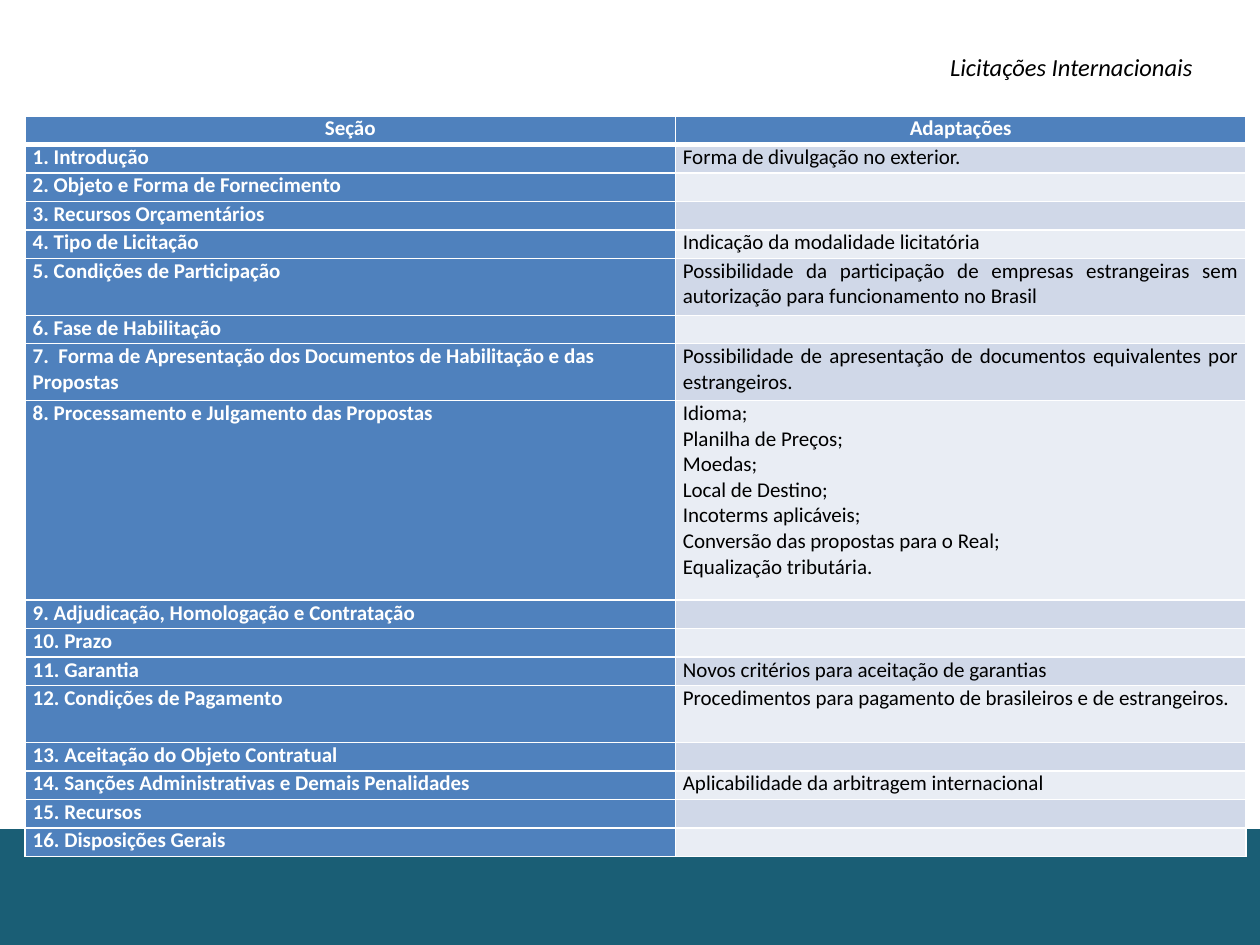
from dataclasses import dataclass

from lxml import etree
from pptx import Presentation
from pptx.dml.color import RGBColor
from pptx.enum import shapes, text
from pptx.oxml import ns
from pptx.util import Inches, Pt


@dataclass(frozen=True)
class Theme:
    font: str = "Calibri"
    title_size: int = 14
    table_size: int = 12
    ink: str = "000000"
    paper: str = "FFFFFF"
    footer: str = "1A5E75"
    section: str = "4F81BD"
    bands: tuple = ("D0D8E8", "E9EDF4")


THEME = Theme()
WIDTH, HEIGHT = 10, 7.5

# Section, adaptations (one per line), height in grid rows
ROWS = [
    ("Seção", "Adaptações", 1),
    ("1. Introdução", "Forma de divulgação no exterior.", 1),
    ("2. Objeto e Forma de Fornecimento", "", 1),
    ("3. Recursos Orçamentários", "", 1),
    ("4. Tipo de Licitação", "Indicação da modalidade licitatória", 1),
    ("5. Condições de Participação",
     "Possibilidade da participação de empresas estrangeiras sem "
     "autorização para funcionamento no Brasil", 2),
    ("6. Fase de Habilitação", "", 1),
    ("7.  Forma de Apresentação dos Documentos de Habilitação e das Propostas",
     "Possibilidade de apresentação de documentos equivalentes por estrangeiros.", 2),
    ("8. Processamento e Julgamento das Propostas",
     "Idioma;\nPlanilha de Preços;\nMoedas;\nLocal de Destino;\n"
     "Incoterms aplicáveis;\nConversão das propostas para o Real;\n"
     "Equalização tributária.", 7),
    ("9. Adjudicação, Homologação e Contratação", "", 1),
    ("10. Prazo", "", 1),
    ("11. Garantia", "Novos critérios para aceitação de garantias", 1),
    ("12. Condições de Pagamento",
     "Procedimentos para pagamento de brasileiros e de estrangeiros.", 2),
    ("13. Aceitação do Objeto Contratual", "", 1),
    ("14. Sanções Administrativas e Demais Penalidades",
     "Aplicabilidade da arbitragem internacional", 1),
    ("15. Recursos", "", 1),
    ("16. Disposições Gerais", "", 1),
]


def color(value):
    return RGBColor.from_string(value)


def style_font(font, size, ink, bold=False, italic=False):
    font.name, font.size = THEME.font, Pt(size)
    font.bold, font.italic = bold, italic
    font.color.rgb = color(ink)


def add_footer(page, box):
    band = page.shapes.add_shape(shapes.MSO_SHAPE.RECTANGLE, *map(Inches, box))
    band.shadow.inherit = False
    band.fill.solid()
    band.fill.fore_color.rgb = color(THEME.footer)
    band.line.fill.background()


def add_title(page, box):
    title = page.shapes.title
    title.left, title.top, title.width, title.height = map(Inches, box)
    frame = title.text_frame
    frame.text = "Licitações Internacionais"
    frame.word_wrap = True
    frame.auto_size = text.MSO_AUTO_SIZE.SHAPE_TO_FIT_TEXT
    frame.vertical_anchor = text.MSO_ANCHOR.TOP
    para = frame.paragraphs[0]
    para.alignment = text.PP_ALIGN.LEFT
    style_font(para.runs[0].font, THEME.title_size, THEME.ink, italic=True)


def add_border(cell, side, points):
    line = etree.SubElement(cell._tc.get_or_add_tcPr(), ns.qn(f"a:ln{side}"), w=str(Pt(points)))
    fill = etree.SubElement(line, ns.qn("a:solidFill"))
    etree.SubElement(fill, ns.qn("a:srgbClr"), val=THEME.paper)


def fill_cell(cell, wording, row, column):
    header, section = row == 0, column == 0
    cell.margin_left = cell.margin_right = Inches(0.06)
    cell.margin_top = cell.margin_bottom = 0

    # Borders come before the fill in the cell properties
    widths = {"L": 1, "R": 1, "T": 3 if row == 1 else 1, "B": 3 if header else 1}
    for side, points in widths.items():
        add_border(cell, side, points)
    strong = header or section
    cell.fill.solid()
    cell.fill.fore_color.rgb = color(THEME.section if strong else THEME.bands[(row - 1) % 2])

    cell.text_frame.text = wording
    for para in cell.text_frame.paragraphs:
        if header:
            para.alignment = text.PP_ALIGN.CENTER
        else:
            para.alignment = text.PP_ALIGN.LEFT if section else text.PP_ALIGN.JUSTIFY
        for span in para.runs:
            style_font(span.font, THEME.table_size, THEME.paper if strong else THEME.ink, strong)
        if not para.runs:  # an empty cell keeps the height of a text line
            etree.SubElement(para._p, ns.qn("a:endParaRPr"), sz=str(THEME.table_size * 100))


def add_sections_table(page, box):
    left, top, width, height = map(Inches, box)
    table = page.shapes.add_table(len(ROWS), 2, left, top, width, height).table
    table.columns[0].width = Inches(5.16)
    table.columns[1].width = width - table.columns[0].width
    unit = height / sum(lines for _, _, lines in ROWS)
    for row, (*wordings, lines) in enumerate(ROWS):
        table.rows[row].height = round(unit * lines)
        for column, wording in enumerate(wordings):
            fill_cell(table.cell(row, column), wording, row, column)


def main():
    deck = Presentation()
    deck.slide_width, deck.slide_height = Inches(WIDTH), Inches(HEIGHT)
    page = deck.slides.add_slide(deck.slide_layouts[5])
    page.background.fill.solid()
    page.background.fill.fore_color.rgb = color(THEME.paper)
    footer_top = 6.58
    add_footer(page, (0, footer_top, WIDTH, HEIGHT - footer_top))
    add_title(page, (7.44, 0.36, 2.2, 0.34))
    add_sections_table(page, (0.2, 0.92, 9.69, 5.88))
    deck.save("out.pptx")


if __name__ == "__main__":
    main()
